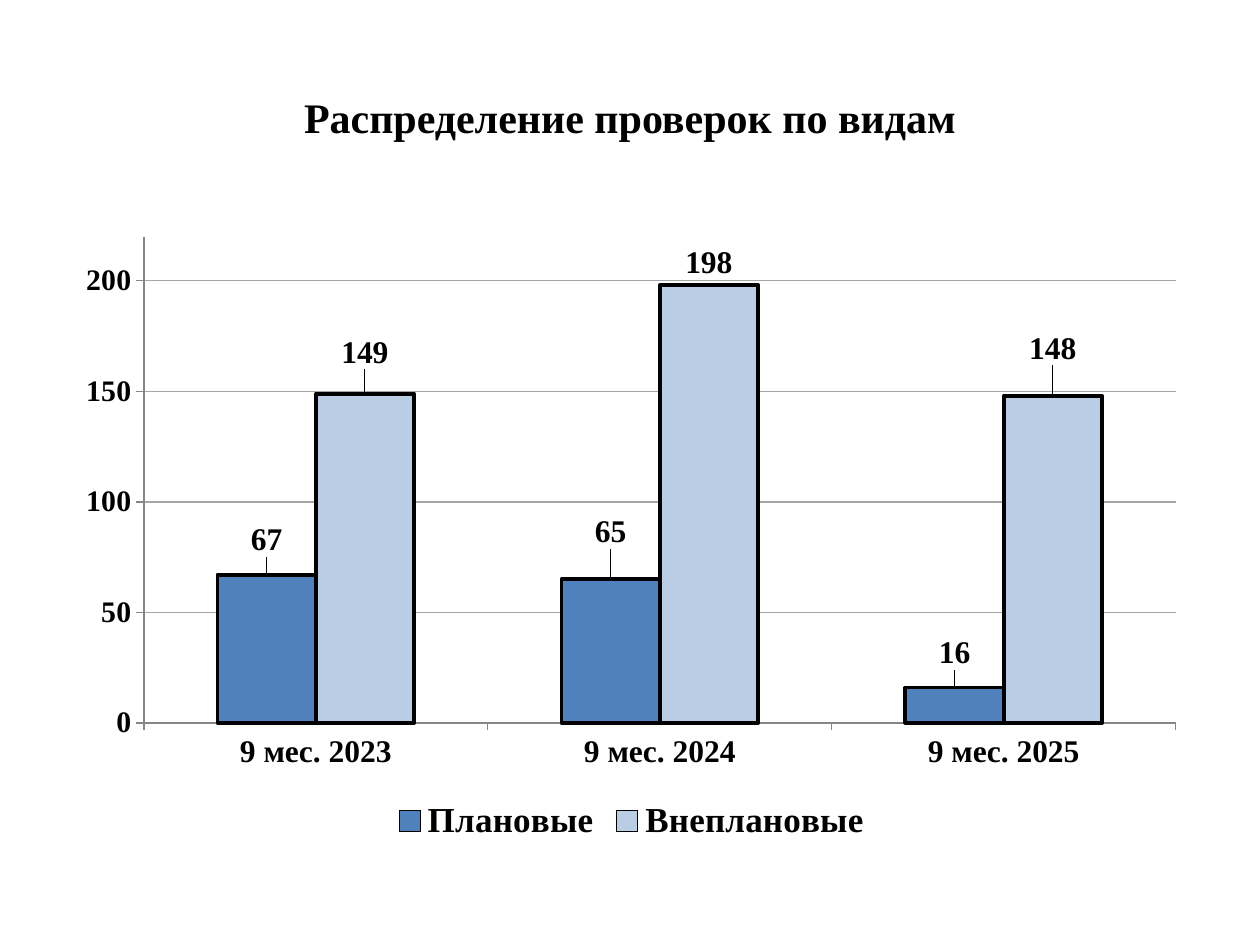
from lxml import etree
from pptx import Presentation
from pptx.chart.data import CategoryChartData
from pptx.dml.color import RGBColor
from pptx.enum.chart import XL_CHART_TYPE, XL_LABEL_POSITION, XL_LEGEND_POSITION, XL_TICK_MARK
from pptx.enum.text import MSO_ANCHOR, PP_ALIGN
from pptx.oxml.ns import qn
from pptx.util import Cm, Pt

COLUMNS = XL_CHART_TYPE.COLUMN_CLUSTERED
OUTSIDE_END = XL_LABEL_POSITION.OUTSIDE_END
BOTTOM = XL_LEGEND_POSITION.BOTTOM
TICK_OUT = XL_TICK_MARK.OUTSIDE
MIDDLE = MSO_ANCHOR.MIDDLE
CENTER = PP_ALIGN.CENTER

BLACK = RGBColor(0x00, 0x00, 0x00)
BLUE = RGBColor(0x4F, 0x81, 0xBD)
LIGHT_BLUE = RGBColor(0xB9, 0xCD, 0xE5)
GRID_GREY = RGBColor(0xA6, 0xA6, 0xA6)
AXIS_GREY = RGBColor(0x86, 0x86, 0x86)
SERIF = "Times New Roman"

PERIODS = ["9 мес. 2023", "9 мес. 2024", "9 мес. 2025"]
INSPECTIONS = [
    ("Плановые", [67, 65, 16], BLUE, [-0.02, -0.04, -0.02]),
    ("Внеплановые", [149, 198, 148], LIGHT_BLUE, [-0.03, 0, -0.04]),
]


def set_font(font, size=18, name=SERIF, bold=True, color=BLACK):
    font.size = Pt(size)
    font.name = name
    font.bold = bold
    font.color.rgb = color


def set_text(tf, text, align=CENTER, anchor=MIDDLE, **fmt):
    tf.word_wrap = True
    tf.vertical_anchor = anchor
    p = tf.paragraphs[0]
    p.alignment = align
    r = p.add_run()
    r.text = text
    set_font(r.font, **fmt)


def set_layout(layout, **values):
    for child in list(layout):
        layout.remove(child)
    manual = etree.SubElement(layout, qn("c:manualLayout"))
    for tag, value in values.items():
        etree.SubElement(manual, qn("c:" + tag)).set("val", str(value))


def add_title(s, x, y, w, h):
    sp = s.shapes.title
    sp.left, sp.top, sp.width, sp.height = x, y, w, h
    set_text(sp.text_frame, "Распределение проверок по видам", size=24)


def format_axis(axis, size):
    axis.major_tick_mark = TICK_OUT
    axis.minor_tick_mark = XL_TICK_MARK.NONE
    axis.format.line.color.rgb = AXIS_GREY
    axis.format.line.width = Pt(0.75)
    set_font(axis.tick_labels.font, size=size)


def format_series(series, color, shifts):
    series.format.fill.solid()
    series.format.fill.fore_color.rgb = color
    series.format.line.color.rgb = BLACK
    series.format.line.width = Pt(2.25)
    series.invert_if_negative = False
    labels = series.data_labels
    labels.show_value = True
    labels.position = OUTSIDE_END
    set_font(labels.font)
    for i, shift in enumerate(shifts):
        if shift:
            label = series.points[i].data_label
            set_font(label.font)
            label.position = OUTSIDE_END
            idx = labels._element.findall(qn("c:dLbl"))[i].find(qn("c:idx")) \
                if len(labels._element.findall(qn("c:dLbl"))) > i \
                else labels._element.findall(qn("c:dLbl"))[-1].find(qn("c:idx"))
            layout = etree.Element(qn("c:layout"))
            idx.addnext(layout)
            set_layout(layout, x=0, y=shift)


def add_inspections_chart(s, x, y, w, h):
    data = CategoryChartData()
    data.categories = PERIODS
    for name, values, _, _ in INSPECTIONS:
        data.add_series(name, values)
    chart = s.shapes.add_chart(COLUMNS, x, y, w, h, data).chart
    chart.has_title = False
    set_font(chart.font, name="Calibri", bold=False)

    plot = chart.plots[0]
    plot.gap_width = 150
    plot.overlap = 0
    plot.vary_by_categories = False
    for series, (_, _, color, shifts) in zip(plot.series, INSPECTIONS):
        format_series(series, color, shifts)

    format_axis(chart.category_axis, 18)
    axis = chart.value_axis
    format_axis(axis, 17)
    axis.minimum_scale, axis.maximum_scale, axis.major_unit = 0, 220, 50
    axis.has_major_gridlines = True
    axis.major_gridlines.format.line.color.rgb = GRID_GREY
    axis.major_gridlines.format.line.width = Pt(0.75)

    chart.has_legend = True
    chart.legend.position = BOTTOM
    chart.legend.include_in_layout = False
    set_font(chart.legend.font, size=20)

    area = chart._chartSpace.find(".//" + qn("c:plotArea"))
    layout = area.find(qn("c:layout"))
    if layout is None:
        layout = etree.Element(qn("c:layout"))
        area.insert(0, layout)
    set_layout(layout, layoutTarget="inner", xMode="edge", yMode="edge",
               x=0.07, y=0.02, w=0.91, h=0.78)


def main():
    prs = Presentation()
    prs.slide_width, prs.slide_height = Cm(25.4), Cm(19.05)
    s = prs.slides.add_slide(prs.slide_layouts[5])
    add_title(s, Cm(1.27), Cm(0.76), Cm(22.86), Cm(3.18))
    add_inspections_chart(s, Cm(1.3), Cm(4.52), Cm(22.86), Cm(12.57))
    prs.save("out.pptx")


if __name__ == "__main__":
    main()
